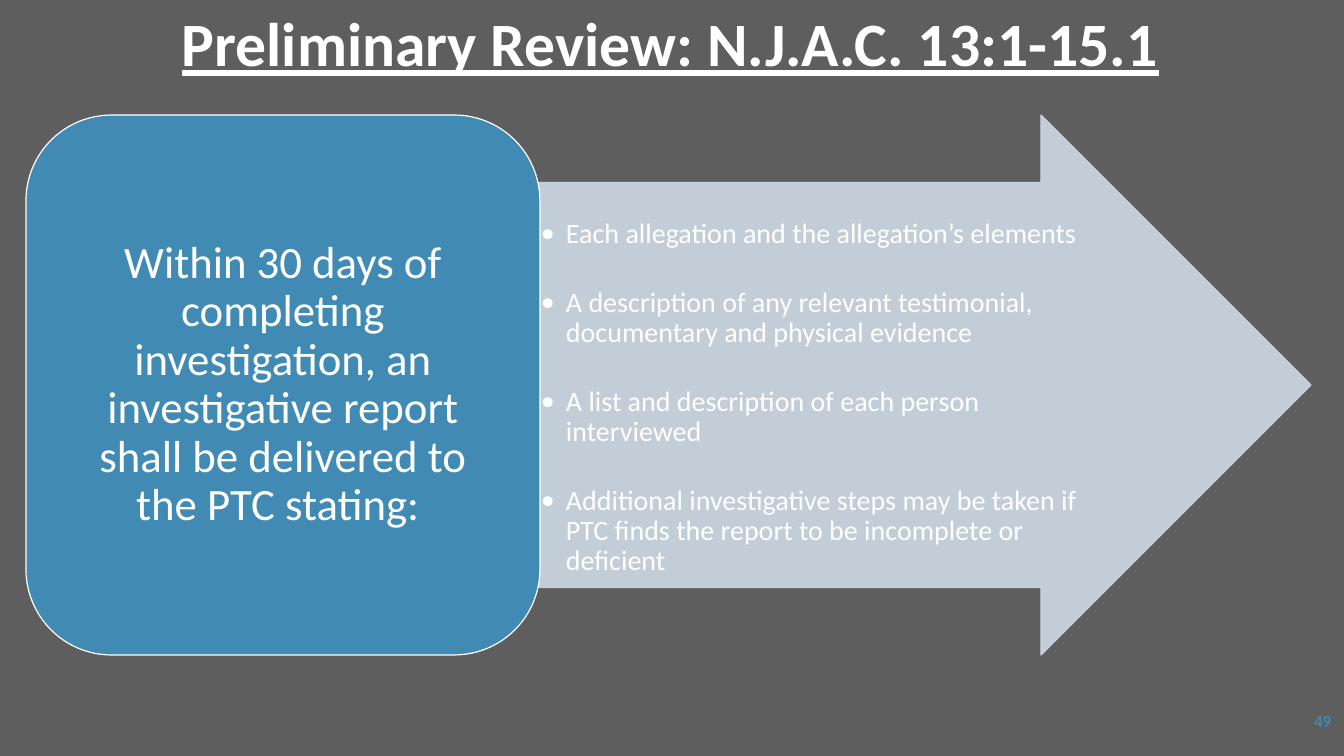
from dataclasses import dataclass

from pptx import Presentation
from pptx import util as u
from pptx.dml.color import RGBColor
from pptx.enum import shapes, text
from pptx.oxml import parse_xml
from pptx.oxml.ns import nsdecls

WIDE, HIGH = 1344, 756
SCALE = 12192000 / WIDE
FONT = "Calibri"
HEX = {"back": "5E5E5E", "text": "FFFFFF", "card": "418AB3", "arrow": "CFDAE5"}

TITLE = "Preliminary Review: N.J.A.C. 13:1-15.1"
LEAD = ("Within 30 days of completing investigation, an investigative "
        "report shall be delivered to the PTC stating: ")
ITEMS = [
    "Each allegation and the allegation’s elements",
    "A description of any relevant testimonial, documentary and physical evidence",
    "A list and description of each person interviewed",
    "Additional investigative steps may be taken if PTC finds the report "
    "to be incomplete or deficient",
]


@dataclass
class Box:
    left: int
    top: int
    width: int
    height: int


@dataclass
class Panel:
    kind: shapes.MSO_SHAPE
    box: Box
    adjust: list[float]
    fill: str
    line: str
    alpha: int
    lines: list[str]
    size: int
    insets: tuple[int, int, int, int]
    anchor: text.MSO_ANCHOR
    align: text.PP_ALIGN
    gap: float = 0
    indent: int = 0


PANELS = [
    Panel(shapes.MSO_SHAPE.RIGHT_ARROW, Box(539, 115, 772, 540), [0.75, 0.5],
          "arrow", "arrow", 90, ITEMS, 20, (2, 37, 1, 1),
          text.MSO_ANCHOR.TOP, text.PP_ALIGN.LEFT, gap=27.5, indent=25),
    Panel(shapes.MSO_SHAPE.ROUNDED_RECTANGLE, Box(26, 115, 514, 540), [0.1667],
          "card", "text", 100, [LEAD], 32, (13, 7, 13, 7),
          text.MSO_ANCHOR.MIDDLE, text.PP_ALIGN.CENTER),
]


def px(n: int) -> u.Emu:
    return u.Emu(round(n * SCALE))


def rgb(name: str) -> RGBColor:
    return RGBColor.from_string(HEX[name])


def place(box: Box) -> list[u.Emu]:
    return [px(n) for n in (box.left, box.top, box.width, box.height)]


def style(para, size: int, color: str, align: text.PP_ALIGN) -> None:
    para.alignment = align
    para.font.name = FONT
    para.font.size = u.Pt(size)
    para.font.color.rgb = rgb(color)


def fade(shape, alpha: int) -> None:
    """Make the fill and outline partly transparent."""
    for color in shape._element.spPr.xpath(".//a:srgbClr"):
        color.append(parse_xml(f'<a:alpha {nsdecls("a")} val="{alpha * 1000}"/>'))


def bullet(para, indent: int) -> None:
    props = para._p.get_or_add_pPr()
    props.set("marL", str(px(indent)))
    props.set("indent", str(-px(indent)))
    props.append(parse_xml(f'<a:buFont {nsdecls("a")} typeface="{FONT}"/>'))
    props.append(parse_xml(f'<a:buChar {nsdecls("a")} char="•"/>'))


def draw(slide, panel: Panel) -> None:
    shape = slide.shapes.add_shape(panel.kind, *place(panel.box))
    for i, value in enumerate(panel.adjust):
        shape.adjustments[i] = value
    shape.shadow.inherit = False
    shape.fill.solid()
    shape.fill.fore_color.rgb = rgb(panel.fill)
    shape.line.color.rgb = rgb(panel.line)
    shape.line.width = u.Pt(0.85)
    if panel.alpha < 100:
        fade(shape, panel.alpha)

    frame = shape.text_frame
    frame.word_wrap = True
    frame.vertical_anchor = panel.anchor
    (frame.margin_left, frame.margin_top,
     frame.margin_right, frame.margin_bottom) = map(px, panel.insets)
    frame.text = "\n".join(panel.lines)
    for para in frame.paragraphs:
        if panel.indent:
            bullet(para, panel.indent)
        style(para, panel.size, "text", panel.align)
        para.line_spacing = 0.9
        para.space_after = u.Pt(panel.gap)


def head(slide) -> None:
    title = slide.shapes.title
    title.left, title.top, title.width, title.height = place(Box(0, 0, 1341, 85))
    frame = title.text_frame
    frame.text = TITLE
    frame.auto_size = text.MSO_AUTO_SIZE.NONE
    frame.vertical_anchor = text.MSO_ANCHOR.TOP
    para = frame.paragraphs[0]
    style(para, 44, "text", text.PP_ALIGN.CENTER)
    para.font.bold = para.font.underline = True


def number(slide) -> None:
    frame = slide.shapes.add_textbox(*place(Box(1270, 706, 71, 30))).text_frame
    frame.word_wrap = True
    frame.vertical_anchor = text.MSO_ANCHOR.MIDDLE
    frame.text = "49"
    para = frame.paragraphs[0]
    style(para, 12, "card", text.PP_ALIGN.RIGHT)
    para.font.bold = True


def main() -> None:
    deck = Presentation()
    deck.slide_width, deck.slide_height = px(WIDE), px(HIGH)
    slide = deck.slides.add_slide(deck.slide_layouts.get_by_name("Title Only"))
    slide.background.fill.solid()
    slide.background.fill.fore_color.rgb = rgb("back")
    head(slide)
    for panel in PANELS:
        draw(slide, panel)
    number(slide)
    deck.save("out.pptx")


if __name__ == "__main__":
    main()
